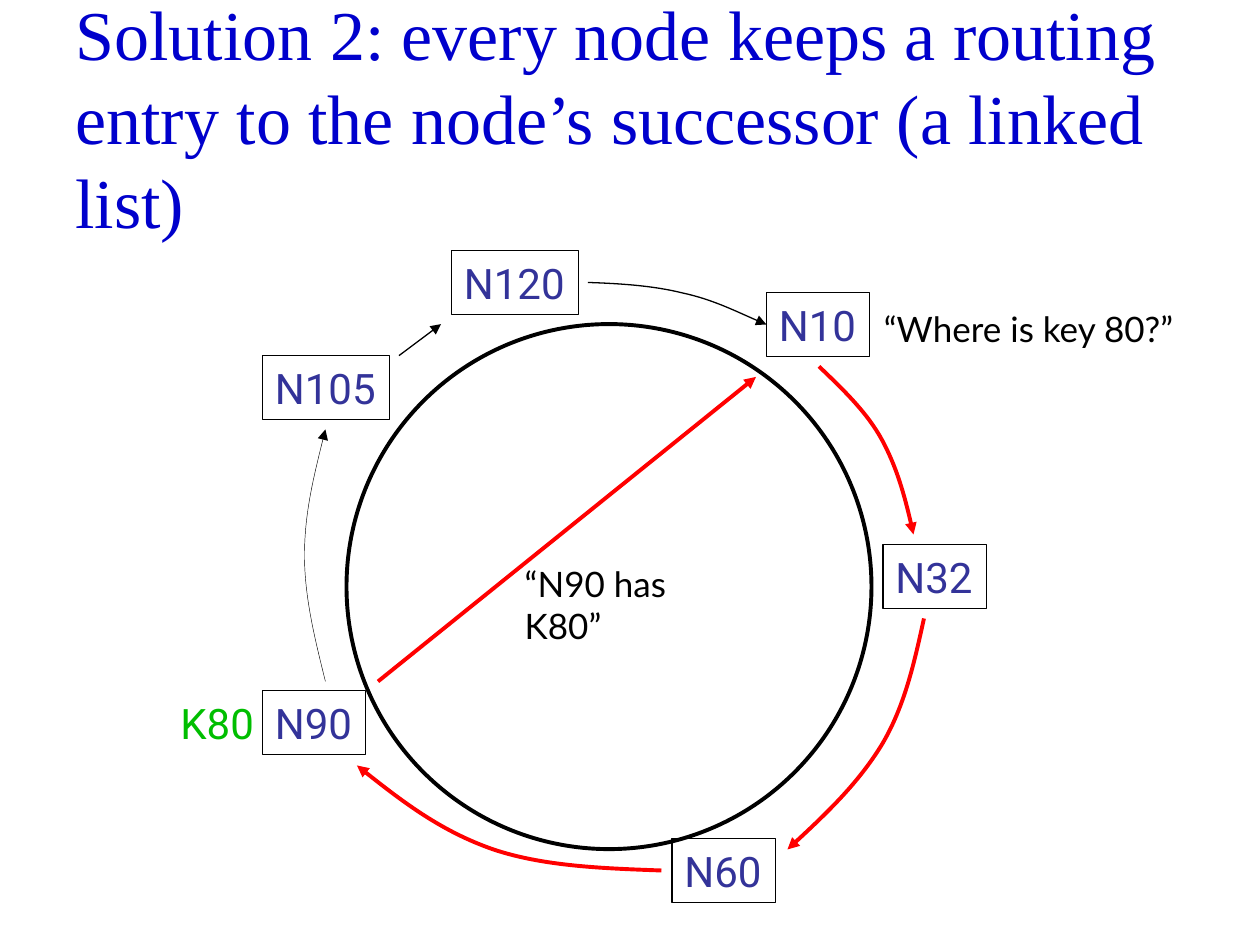
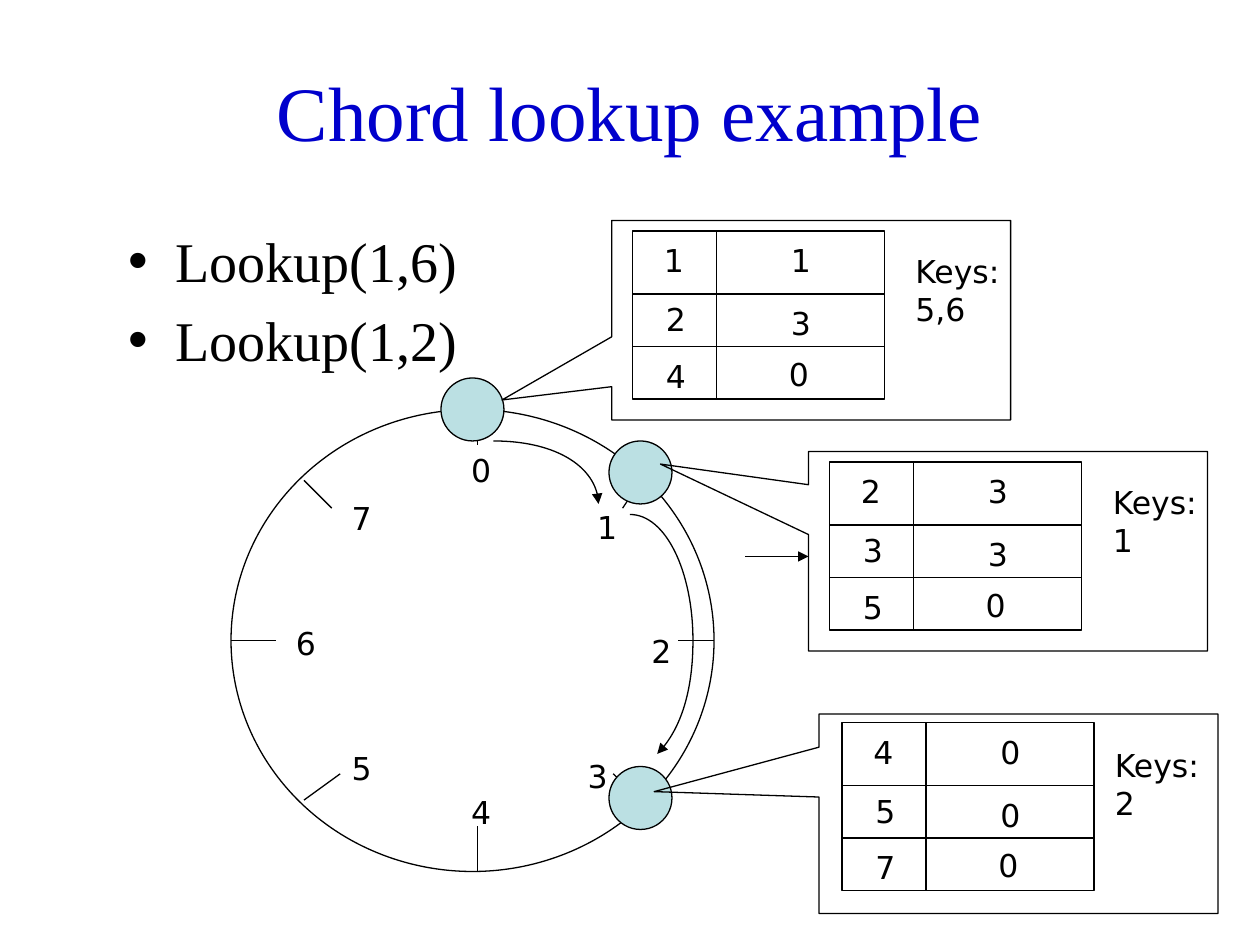
from pptx import Presentation
from pptx import util as u
from pptx.dml.color import RGBColor
from pptx.enum import shapes, text
from pptx.oxml.ns import qn
from lxml import etree

COLUMNS, ROWS = 120, 90
WIDTH, HEIGHT = u.Inches(10), u.Inches(7.5)
COLORS = {
    "title": "0000CC",
    "ink": "000000",
    "node": "333399",
    "key": "00BE00",
    "query": "FF0000",
    "peer": "BBE0E3",
}
TITLE_FONT, NODE_FONT, QUOTE_FONT, LABEL_FONT = (
    "Times New Roman", "Roboto", "Lato", "DejaVu Sans")
THIN, THICK = 0.75, 2.25
LABEL_SIZE = (4.3, 4.8)
KEYS_SIZE = (10.9, 8.4)
CALLOUT_SIZE = (38, 19)
FINGER_SIZE = (24, 16)
FINGER_RULES = (((0, 6), (24, 6)), ((0, 11), (24, 11)), ((8, 0), (8, 16)))
FINGER_CELLS = ((1.8, 0.4), (13.9, 0.4), (2, 6), (13.9, 6.4),
                (2, 11.4), (13.7, 11.2))


def across(columns):
    return int(WIDTH * columns / COLUMNS)


def down(rows):
    return int(HEIGHT * rows / ROWS)


def place(left, top, width, height):
    return across(left), down(top), across(width), down(height)


def shift(origin, offset):
    return origin[0] + offset[0], origin[1] + offset[1]


def color(name):
    return RGBColor.from_string(COLORS[name])


def set_font(paragraph, name, size, color_name):
    paragraph.font.name = name
    paragraph.font.size = u.Pt(size)
    paragraph.font.color.rgb = color(color_name)


def set_line(shape, color_name="ink", weight=THIN, arrow=False):
    shape.line.color.rgb = color(color_name)
    shape.line.width = u.Pt(weight)
    if arrow:
        outline = shape.element.spPr.find(qn("a:ln"))
        etree.SubElement(outline, qn("a:tailEnd"), type="triangle")


def write_placeholder(placeholder, box, lines, size, color_name, alignment):
    (placeholder.left, placeholder.top,
     placeholder.width, placeholder.height) = place(*box)
    frame = placeholder.text_frame
    frame.text = "\n".join(lines)
    frame.auto_size = text.MSO_AUTO_SIZE.NONE
    for paragraph in frame.paragraphs:
        paragraph.alignment = alignment
        set_font(paragraph, TITLE_FONT, size, color_name)


def add_title(slide, wording, top, size, alignment):
    write_placeholder(slide.shapes.title, (6, top, 108, 15), [wording],
                      size, "title", alignment)
    slide.shapes.title.text_frame.vertical_anchor = text.MSO_ANCHOR.MIDDLE


def add_label(slide, wording, box, font=LABEL_FONT, size=18,
              color_name="ink", wrap=False):
    label = slide.shapes.add_textbox(*place(*box))
    label.text_frame.text = wording
    label.text_frame.word_wrap = wrap
    for paragraph in label.text_frame.paragraphs:
        set_font(paragraph, font, size, color_name)


def add_outline(slide, kind, box, weight=THIN, fill=None):
    shape = slide.shapes.add_shape(kind, *place(*box))
    shape.shadow.inherit = False
    if fill:
        shape.fill.solid()
        shape.fill.fore_color.rgb = color(fill)
    else:
        shape.fill.background()
    set_line(shape, weight=weight)
    return shape


def add_node(slide, name, left, top):
    box = (left, top, 3 + 2.28 * len(name), 6.1)
    node = add_outline(slide, shapes.MSO_SHAPE.RECTANGLE, box)
    node.text_frame.text = name
    node.text_frame.word_wrap = False
    paragraph = node.text_frame.paragraphs[0]
    paragraph.alignment = text.PP_ALIGN.LEFT
    set_font(paragraph, NODE_FONT, 24, "node")


def add_straight(slide, start, end, color_name="ink", weight=THIN, arrow=False):
    connector = slide.shapes.add_connector(
        shapes.MSO_CONNECTOR.STRAIGHT,
        across(start[0]), down(start[1]), across(end[0]), down(end[1]))
    set_line(connector, color_name, weight, arrow)
    etree.SubElement(connector.element.spPr, qn("a:effectLst"))


def add_curved_arrow(slide, controls, color_name="ink", weight=THIN):
    points = [(across(x), down(y)) for x, y in controls]
    builder = slide.shapes.build_freeform(*points[0])
    builder.add_line_segments(points[1:], close=False)
    curve = builder.convert_to_shape()
    segments = list(curve.element.iter(qn("a:lnTo")))
    outline = segments[0].getparent()
    for first in range(0, len(segments), 3):
        bezier = etree.SubElement(outline, qn("a:cubicBezTo"))
        for segment in segments[first:first + 3]:
            bezier.append(segment[0])
            outline.remove(segment)
    curve.shadow.inherit = False
    curve.fill.background()
    set_line(curve, color_name, weight, arrow=True)


def add_finger_grid(slide, corner, values):
    add_outline(slide, shapes.MSO_SHAPE.RECTANGLE, (*corner, *FINGER_SIZE))
    for start, end in FINGER_RULES:
        add_straight(slide, shift(corner, start), shift(corner, end))
    for offset, value in zip(FINGER_CELLS, values):
        add_label(slide, value, (*shift(corner, offset), *LABEL_SIZE))


def add_peer_callout(slide, corner, tip, grid_corner, values, keys_corner, keys):
    callout = add_outline(slide, shapes.MSO_SHAPE.RECTANGULAR_CALLOUT,
                          (*corner, *CALLOUT_SIZE))
    for axis in range(2):
        callout.adjustments[axis] = (
            (tip[axis] - corner[axis]) / CALLOUT_SIZE[axis] - 0.5)
    add_finger_grid(slide, grid_corner, values)
    add_label(slide, f"Keys:\n{keys}", (*keys_corner, *KEYS_SIZE))


def build_successor_slide(presentation):
    slide = presentation.slides.add_slide(presentation.slide_layouts[5])
    add_title(slide, "Solution 2: every node keeps a routing entry to the "
              "node’s successor (a linked list)", 3.6, 40, text.PP_ALIGN.LEFT)
    add_outline(slide, shapes.MSO_SHAPE.OVAL, (33, 30.87, 50, 50), THICK)
    nodes = (("N32", 84.1, 51.84), ("N90", 25, 65.76), ("N105", 25, 33.84),
             ("N60", 64, 79.86), ("N10", 73, 27.84), ("N120", 43, 23.84))
    for node in nodes:
        add_node(slide, *node)
    add_straight(slide, (38, 33.87), (42, 30.87), arrow=True)
    add_label(slide, "K80", (16, 65.85, 9.6, 6), NODE_FONT, 24, "key")
    add_label(slide, "“Where is key 80?”", (83, 28.7, 30.4, 5.2), QUOTE_FONT, 20)

    successors = (
        ("ink", THIN, ((56, 26.9), (59, 27), (62.2, 27.2), (65, 27.9),
                       (67.8, 28.5), (70.4, 29.8), (73, 30.9))),
        ("query", THICK, ((78, 34.9), (80.3, 37.1), (82.6, 39.3), (84, 41.9),
                          (85.4, 44.5), (86.3, 47.7), (87, 50.9))),
        ("query", THICK, ((88, 58.9), (87.1, 63), (86.2, 67.2), (84, 70.9),
                          (81.8, 74.5), (78.4, 77.8), (75, 80.9))),
        ("query", THICK, ((63, 82.9), (57.4, 82.7), (51.8, 82.5), (47, 80.9),
                          (42.1, 79.2), (38, 76.1), (34, 72.9))),
        ("ink", 0.25, ((31, 64.9), (30, 60.9), (29, 56.9), (29, 52.9),
                       (29, 48.9), (30, 44.9), (31, 40.9))),
    )
    for color_name, weight, controls in successors:
        add_curved_arrow(slide, controls, color_name, weight)
    add_straight(slide, (36, 64.9), (72, 35.9), "query", THICK, arrow=True)
    add_label(slide, "“N90 has K80”", (48.8, 53, 18, 8), QUOTE_FONT, 20,
              wrap=True)


def build_lookup_slide(presentation):
    slide = presentation.slides.add_slide(presentation.slide_layouts[1])
    add_title(slide, "Chord lookup example", 3, 44, text.PP_ALIGN.CENTER)
    write_placeholder(slide.placeholders[1], (11, 21, 37, 15),
                      ["Lookup(1,6)", "Lookup(1,2)"], 32, "ink",
                      text.PP_ALIGN.LEFT)

    add_outline(slide, shapes.MSO_SHAPE.OVAL, (22, 39, 46, 44))
    ticks = (
        ((45.45, 39), (45.45, 42.4), (43.7, 42.4)),
        ((61.1, 45.7), (59.3, 48.4), (55.7, 47.8)),
        ((68, 61), (64.6, 61), (60.85, 59.65)),
        ((61.1, 76.2), (58.4, 73.7), (54.8, 71.5)),
        ((45.45, 83), (45.45, 78.7), (43.7, 74.9)),
        ((28.95, 76.2), (32.4, 73.7), (32.3, 70.7)),
        ((22, 61), (26.3, 61), (27, 58.8)),
        ((28.95, 45.75), (31.6, 48.4), (32.3, 46.9)),
    )
    for identifier, (rim, inner, corner) in enumerate(ticks):
        add_straight(slide, rim, inner)
        add_label(slide, str(identifier), (*corner, *LABEL_SIZE))
    for left, top in ((42, 36), (58, 42), (58, 73)):
        add_outline(slide, shapes.MSO_SHAPE.OVAL, (left, top, 6, 6), fill="peer")

    callouts = (
        ((58.25, 21), (47.8, 38.1), (60.25, 22), "112340", (86, 23.4), "5,6"),
        ((77, 43), (62.9, 44.2), (79, 44), "233350", (104.8, 45.4), "1"),
        ((78, 68), (62.3, 75.4), (80.2, 68.8), "405070", (105, 70.45), "2"),
    )
    for callout in callouts:
        add_peer_callout(slide, *callout)
    add_straight(slide, (71, 53), (77, 53), arrow=True)
    add_curved_arrow(slide, ((47, 42), (52.6, 42), (57, 44.6), (57, 48)))
    add_curved_arrow(slide, ((60, 49), (63.4, 49), (66, 54.4), (66, 61),
                             (66, 65.6), (64.7, 69.8), (62.6, 71.8)))


def main():
    presentation = Presentation()
    presentation.slide_width, presentation.slide_height = WIDTH, HEIGHT
    build_successor_slide(presentation)
    build_lookup_slide(presentation)
    presentation.save("out.pptx")


if __name__ == "__main__":
    main()
